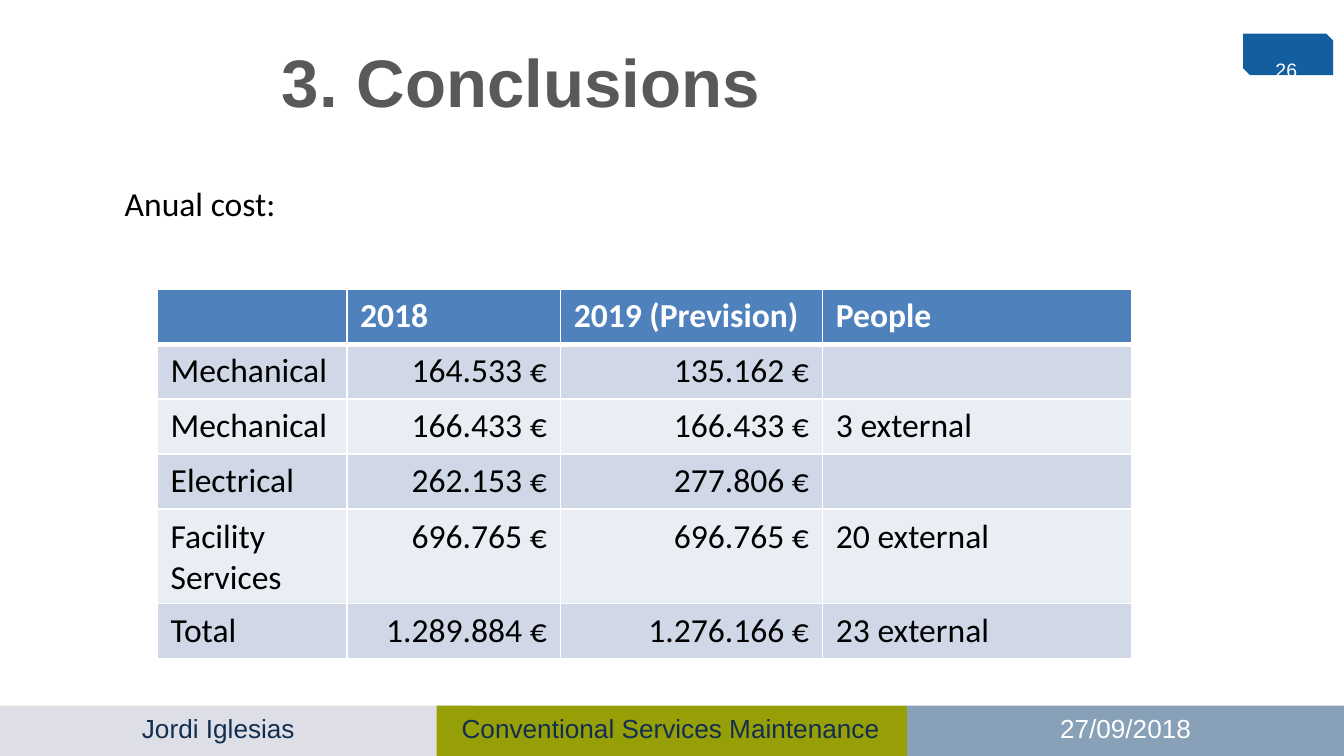
from dataclasses import dataclass

from lxml import etree
from pptx import Presentation
from pptx import util as u
from pptx.dml.color import RGBColor
from pptx.enum import shapes, text
from pptx.oxml import ns


@dataclass(frozen=True)
class Theme:
    white: str = "FFFFFF"
    black: str = "000000"
    gray: str = "595959"
    navy: str = "112E50"
    blue: str = "125E9F"
    pale: str = "DEDFE6"
    olive: str = "979F07"
    steel: str = "88A0B8"
    header: str = "4F81BD"
    bands: tuple = ("D0D8E8", "E9EDF4")
    heading_font: str = "Arial"
    body_font: str = "Calibri"
    title_size: float = 36
    body_size: float = 18
    footer_size: float = 14
    number_size: float = 10.4


THEME = Theme()
LEFT, CENTER, RIGHT = text.PP_ALIGN.LEFT, text.PP_ALIGN.CENTER, text.PP_ALIGN.RIGHT


def write(frame, content, *, size, color, font, bold=False, align=LEFT):
    para = frame.paragraphs[0]
    para.alignment = align
    span = para.add_run()
    span.text = content
    span.font.size = u.Pt(size)
    span.font.name = font
    span.font.bold = bold
    span.font.color.rgb = RGBColor.from_string(color)


def border_cell(cell, color, bottom):
    properties = cell._tc.get_or_add_tcPr()
    widths = {"lnL": 1, "lnR": 1, "lnT": 1, "lnB": bottom}
    for index, (tag, width) in enumerate(widths.items()):
        line = etree.Element(ns.qn(f"a:{tag}"), w=str(u.Pt(width)))
        fill = etree.SubElement(line, ns.qn("a:solidFill"))
        etree.SubElement(fill, ns.qn("a:srgbClr"), val=color)
        properties.insert(index, line)


class SlideBuilder:
    def __init__(self, slide, theme):
        self.slide = slide
        self.theme = theme

    def panel(self, kind, left, top, width, height, color):
        shape = self.slide.shapes.add_shape(kind, *map(u.Inches, (left, top, width, height)))
        shape.shadow.inherit = False
        shape.fill.solid()
        shape.fill.fore_color.rgb = RGBColor.from_string(color)
        shape.line.fill.background()

    def label(self, content, left, top, width, height, *, wrap=True, grow=True, **style):
        box = self.slide.shapes.add_textbox(*map(u.Inches, (left, top, width, height)))
        frame = box.text_frame
        frame.word_wrap = wrap
        if grow:
            frame.auto_size = text.MSO_AUTO_SIZE.SHAPE_TO_FIT_TEXT
        write(frame, content, **style)

    def table(self, rows, left, top, widths, row_height):
        theme = self.theme
        frame = self.slide.shapes.add_table(
            len(rows), len(widths), u.Inches(left), u.Inches(top),
            u.Inches(sum(widths)), u.Inches(row_height * len(rows)))
        table = frame.table
        for column, width in zip(table.columns, widths):
            column.width = u.Inches(width)
        for r, values in enumerate(rows):
            table.rows[r].height = u.Inches(row_height)
            is_header = r == 0
            for c, value in enumerate(values):
                cell = table.cell(r, c)
                cell.fill.solid()
                cell.fill.fore_color.rgb = RGBColor.from_string(
                    theme.header if is_header else theme.bands[(r - 1) % 2])
                border_cell(cell, theme.white, 3 if is_header else 1)
                if value:
                    write(cell.text_frame, value, size=theme.body_size, font=theme.body_font,
                          color=theme.white if is_header else theme.black, bold=is_header,
                          align=RIGHT if value.endswith("€") else LEFT)


def main():
    deck = Presentation()
    deck.slide_width, deck.slide_height = u.Inches(10), u.Inches(10 * 9 / 16)
    page = SlideBuilder(deck.slides.add_slide(deck.slide_layouts[6]), THEME)

    page.panel(shapes.MSO_SHAPE.SNIP_2_DIAG_RECTANGLE, 9.25, 0.25, 0.67, 0.31, THEME.blue)
    for left, width, color in [(0, 3.5, THEME.pale), (3.25, 3.5, THEME.olive),
                               (6.75, 3.25, THEME.steel)]:
        page.panel(shapes.MSO_SHAPE.RECTANGLE, left, 5.25, width, 0.38, color)
    for content, left, width, color in [
        ("Jordi Iglesias", 0, 3.25, THEME.navy),
        ("Conventional Services Maintenance", 3.25, 3.48, THEME.navy),
        ("27/09/2018", 6.75, 3.25, THEME.white),
    ]:
        page.label(content, left, 5.25, width, 0.34, size=THEME.footer_size,
                   color=color, font=THEME.heading_font, align=CENTER)

    page.label("3. Conclusions", 2, 0.25, 7.17, 0.71, size=THEME.title_size,
               color=THEME.gray, font=THEME.heading_font, bold=True)
    page.label("26", 9.08, 0.38, 0.67, 0.25, grow=False, size=THEME.number_size,
               color=THEME.white, font=THEME.heading_font, align=RIGHT)

    costs = [
        ("", "2018", "2019 (Prevision)", "People"),
        ("Mechanical", "164.533 €", "135.162 €", ""),
        ("Mechanical", "166.433 €", "166.433 €", "3 external"),
        ("Electrical", "262.153 €", "277.806 €", ""),
        ("Facility Services", "696.765 €", "696.765 €", "20 external"),
        ("Total", "1.289.884 €", "1.276.166 €", "23 external"),
    ]
    page.table(costs, 1.17, 2.15, (1.41, 1.59, 1.95, 2.3), 0.41)
    page.label("Anual cost:", 0.83, 1.31, 1.34, 0.4, wrap=False,
               size=THEME.body_size, color=THEME.black, font=THEME.body_font)

    deck.save("out.pptx")


if __name__ == "__main__":
    main()
